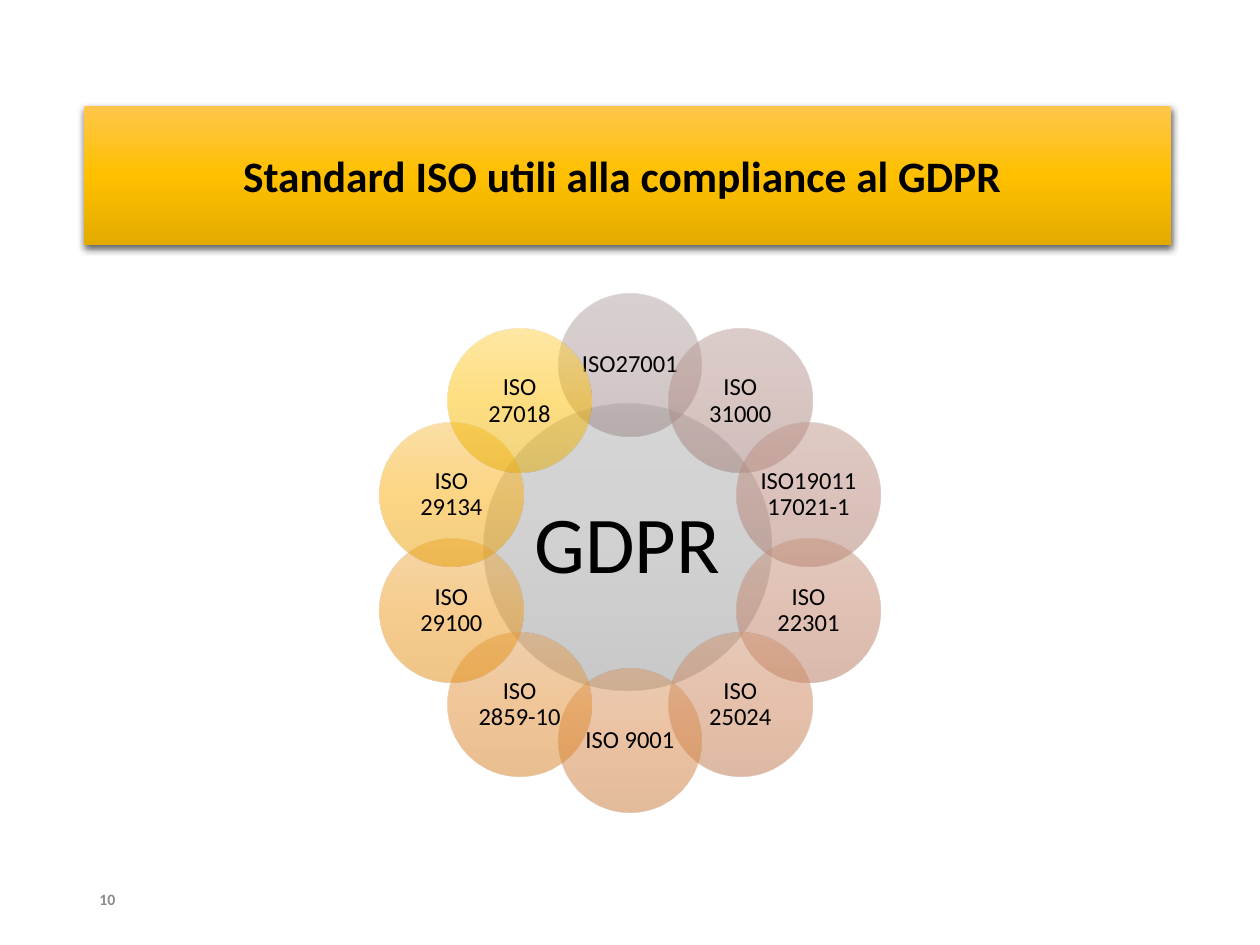
from colorsys import hls_to_rgb, rgb_to_hls
from math import cos, pi, sin

from pptx import Presentation
from pptx.dml.color import RGBColor
from pptx.enum.shapes import MSO_SHAPE
from pptx.enum.text import MSO_ANCHOR, PP_ALIGN
from pptx.oxml import parse_xml
from pptx.oxml.ns import nsdecls, qn
from pptx.util import Inches, Pt

WIDTH, HEIGHT = 10, 7.5
FONT = "Calibri"
COLORS = {
    "text": "000000",
    "number": "8C8C8C",
    "shadow": "000000",
    "banner": ("FFC64B", "FFC000", "E3AB00"),
    "hub": ("AFAFAF", "A5A5A5", "939393"),
    "petals": (
        ("B4A3A3", "AC9797", "9A8585"),
        ("BA9797", "B38888", "A17777"),
        ("C08B8B", "BB7878", "AA6767"),
        ("C77E7E", "C46868", "B35757"),
        ("CF7272", "CE5656", "BD4747"),
        ("D86666", "D94444", "C83535"),
        ("E15B5B", "E43131", "D42323"),
        ("EC5252", "F11D1D", "E10F0F"),
        ("F74D4D", "FE0909", "E50404"),
        ("FF4B4B", "FF0000", "E30000"),
    ),
}
STANDARDS = (
    "ISO27001", "ISO 31000", "ISO19011 17021-1", "ISO 22301", "ISO 25024",
    "ISO 9001", "ISO 2859-10", "ISO 29100", "ISO 29134", "ISO 27018",
)
HUE_STEP = 4.5


def with_hue(color, degrees):
    red, green, blue = (value / 255 for value in bytes.fromhex(color))
    _, lightness, saturation = rgb_to_hls(red, green, blue)
    channels = hls_to_rgb(degrees / 360, lightness, saturation)
    return "".join(f"{round(value * 255):02X}" for value in channels)


def write(shape, text, size, color="text", bold=False, align=PP_ALIGN.CENTER,
          inset=None, line_spacing=None):
    frame = shape.text_frame
    frame.word_wrap = True
    frame.vertical_anchor = MSO_ANCHOR.MIDDLE
    if inset is not None:
        frame.margin_left = frame.margin_right = Inches(inset)
        frame.margin_top = frame.margin_bottom = Inches(inset)
    paragraph = frame.paragraphs[0]
    paragraph.alignment = align
    paragraph.line_spacing = line_spacing
    run = paragraph.add_run()
    run.text = text
    run.font.name = FONT
    run.font.size = Pt(size)
    run.font.bold = bold
    run.font.color.rgb = RGBColor.from_string(COLORS[color])


class SlideBuilder:
    def __init__(self, slide):
        self.slide = slide

    def place(self, left, top, width, height):
        return (Inches(left * WIDTH), Inches(top * HEIGHT),
                Inches(width * WIDTH), Inches(height * HEIGHT))

    def gradient_shape(self, preset, box, stops, opacity=100):
        shape = self.slide.shapes.add_shape(preset, *self.place(*box))
        shape.shadow.inherit = False
        shape.line.fill.background()
        shape.fill.gradient()
        stop_xml = "".join(
            f'<a:gs pos="{position * 50000}"><a:srgbClr val="{color}">'
            f'<a:alpha val="{opacity * 1000}"/></a:srgbClr></a:gs>'
            for position, color in enumerate(stops))
        properties = shape._element.spPr
        properties.replace(
            properties.find(qn("a:gradFill")),
            parse_xml(f'<a:gradFill {nsdecls("a")} rotWithShape="1">'
                      f'<a:gsLst>{stop_xml}</a:gsLst>'
                      '<a:lin ang="5400000" scaled="0"/></a:gradFill>'))
        return shape

    def banner(self, text, box):
        banner = self.gradient_shape(MSO_SHAPE.RECTANGLE, box, COLORS["banner"])
        banner._element.spPr.find(qn("a:effectLst")).append(parse_xml(
            f'<a:outerShdw {nsdecls("a")} blurRad="{Pt(4.5)}" dist="{Pt(1.5)}" '
            f'dir="5400000" rotWithShape="0"><a:srgbClr val="{COLORS["shadow"]}">'
            '<a:alpha val="63000"/></a:srgbClr></a:outerShdw>'))
        write(banner, text, 24.8, bold=True)

    def circle(self, text, center_x, center_y, diameter, stops, size, inset):
        width, height = diameter / WIDTH, diameter / HEIGHT
        box = (center_x - width / 2, center_y - height / 2, width, height)
        circle = self.gradient_shape(MSO_SHAPE.OVAL, box, stops, opacity=50)
        write(circle, text, size, inset=inset, line_spacing=0.9)

    def petal_ring(self, labels, center_x, center_y, radius, diameter):
        for index, (label, stops) in enumerate(zip(labels, COLORS["petals"])):
            angle = 2 * pi * index / len(labels)
            hue = HUE_STEP * (index + 1)
            self.circle(label,
                        center_x + radius * sin(angle) / WIDTH,
                        center_y - radius * cos(angle) / HEIGHT,
                        diameter, [with_hue(stop, hue) for stop in stops],
                        size=14, inset=0.02)

    def page_number(self, text, box):
        number = self.slide.shapes.add_textbox(*self.place(*box))
        write(number, text, 9, color="number", bold=True, align=PP_ALIGN.LEFT)


def main():
    deck = Presentation()
    deck.slide_width, deck.slide_height = Inches(WIDTH), Inches(HEIGHT)
    builder = SlideBuilder(deck.slides.add_slide(deck.slide_layouts[6]))
    builder.page_number("10", (0.069, 0.925, 0.14, 0.053))
    builder.banner("Standard ISO utili alla compliance al GDPR ",
                   (0.067, 0.112, 0.862, 0.147))
    builder.circle("GDPR", 0.498, 0.579, 2.28, COLORS["hub"], size=46, inset=0.06)
    builder.petal_ring(STANDARDS, 0.5, 0.585, radius=1.49, diameter=1.14)
    deck.save("out.pptx")


if __name__ == "__main__":
    main()
